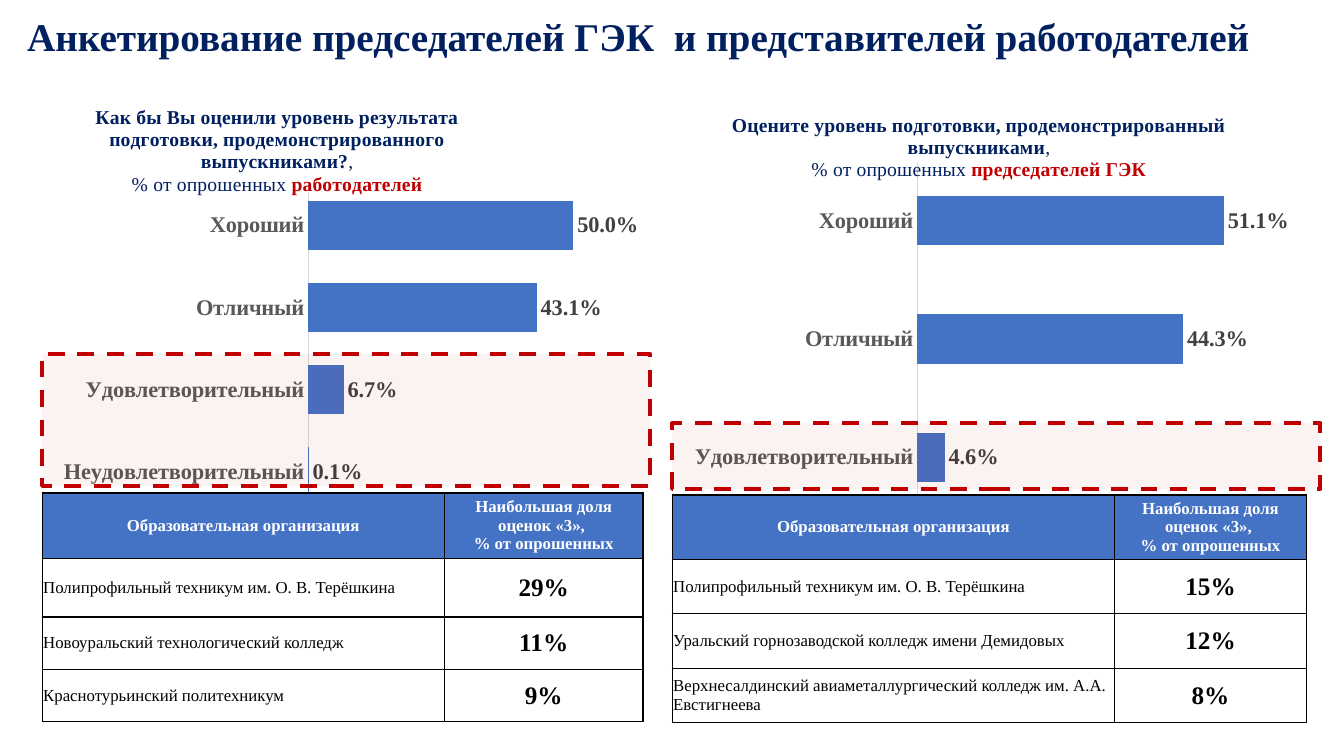
from lxml import etree
from pptx import Presentation
from pptx import util as u
from pptx.chart import data as cd
from pptx.dml import color as dc
from pptx.enum import chart as ch, dml, shapes, text
from pptx.oxml import ns

rgb = dc.RGBColor.from_string
NAVY, RED, BLUE = "002060", "C00000", "4472C4"


def style(font, size, color, bold):
    font.name = "Times New Roman"
    font.size = u.Pt(size)
    font.color.rgb = rgb(color)
    font.bold = bold


def set_layout(parent, index, **values):
    for old in parent.findall(ns.qn("c:layout")):
        parent.remove(old)
    layout = etree.Element(ns.qn("c:layout"))
    manual = etree.SubElement(layout, ns.qn("c:manualLayout"))
    for tag, value in values.items():
        etree.SubElement(manual, ns.qn("c:" + tag)).set("val", str(value))
    parent.insert(index, layout)


panels = [
    {
        "chart_box": (27.4, 63.4, 429.1, 313.9),
        "question": [
            [("Как бы Вы оценили уровень результата", NAVY, True)],
            [("подготовки, продемонстрированного", NAVY, True)],
            [("выпускниками?", NAVY, True), (",", NAVY, False)],
            [("% от опрошенных ", NAVY, False), ("работодателей", RED, True)],
        ],
        "question_at": (0.09, 0.03),
        "plot": (0.449, 0.218, 0.53, 0.747),
        "gap": 68,
        "grades": [("Неудовлетворительный", 0.001), ("Удовлетворительный", 0.067),
                   ("Отличный", 0.431), ("Хороший", 0.5)],
        "table_at": (30.2, 352.1),
        "columns": (287.3, 141.8),
        "rows": (46.8, 41.8, 37.4, 37.4),
        "colleges": [("Полипрофильный техникум им. О. В. Терёшкина", "29%"),
                     ("Новоуральский технологический колледж", "11%"),
                     ("Краснотурьинский политехникум", "9%")],
        "highlight": (30.2, 252.7, 434.2, 94.3),
    },
    {
        "chart_box": (464.4, 65.5, 468.7, 313.9),
        "question": [
            [("Оцените уровень подготовки, продемонстрированный", NAVY, True)],
            [("выпускниками", NAVY, True), (",", NAVY, False)],
            [("% от опрошенных ", NAVY, False), ("председателей ГЭК", RED, True)],
        ],
        "question_at": (0.12, 0.04),
        "plot": (0.407, 0.159, 0.549, 0.808),
        "gap": 139,
        "grades": [("Удовлетворительный", 0.046), ("Отличный", 0.443), ("Хороший", 0.511)],
        "table_at": (480.2, 353.5),
        "columns": (316.1, 136.8),
        "rows": (46.1, 38.9, 38.9, 38.9),
        "colleges": [("Полипрофильный техникум им. О. В. Терёшкина", "15%"),
                     ("Уральский горнозаводской колледж имени Демидовых", "12%"),
                     ("Верхнесалдинский авиаметаллургический колледж им. А.А. Евстигнеева", "8%")],
        "highlight": (480.2, 302.4, 463, 46.8),
    },
]

prs = Presentation()
prs.slide_width, prs.slide_height = u.Pt(960), u.Pt(540)
slide = prs.slides.add_slide(prs.slide_layouts[5])

heading = slide.shapes.title
heading.left, heading.top, heading.width, heading.height = map(u.Pt, (12.2, 5, 936, 46.1))
heading.text_frame.vertical_anchor = text.MSO_ANCHOR.MIDDLE
heading.text_frame.word_wrap = True
heading_line = heading.text_frame.paragraphs[0]
heading_line.alignment = text.PP_ALIGN.JUSTIFY
heading_line.line_spacing = 0.9
heading_run = heading_line.add_run()
heading_run.text = "Анкетирование председателей ГЭК  и представителей работодателей"
style(heading_run.font, 28, NAVY, True)

for panel in panels:
    grades = cd.CategoryChartData(number_format="0.0%")
    grades.categories = [grade for grade, share in panel["grades"]]
    grades.add_series("Series 1", [share for grade, share in panel["grades"]])
    chart = slide.shapes.add_chart(
        ch.XL_CHART_TYPE.BAR_CLUSTERED, *map(u.Pt, panel["chart_box"]), grades).chart
    chart.font.name = "Calibri"
    chart.font.size = u.Pt(10)
    chart.font.color.rgb = rgb("000000")
    chart.has_legend = False

    question = chart.chart_title.text_frame
    for number, pieces in enumerate(panel["question"]):
        line = question.add_paragraph() if number else question.paragraphs[0]
        line.alignment = text.PP_ALIGN.CENTER
        for words, color, bold in pieces:
            run = line.add_run()
            run.text = words
            style(run.font, 14, color, bold)
    x, y = panel["question_at"]
    set_layout(chart._chartSpace.chart.find(ns.qn("c:title")), 1,
               xMode="edge", yMode="edge", x=x, y=y)
    x, y, w, h = panel["plot"]
    set_layout(chart._chartSpace.chart.plotArea, 0, layoutTarget="inner",
               xMode="edge", yMode="edge", x=x, y=y, w=w, h=h)

    grade_axis, share_axis = chart.category_axis, chart.value_axis
    grade_axis.major_tick_mark = ch.XL_TICK_MARK.NONE
    grade_axis.format.line.color.rgb = rgb("D9D9D9")
    grade_axis.format.line.width = u.Pt(0.75)
    style(grade_axis.tick_labels.font, 16, "595959", True)
    share_axis.minimum_scale, share_axis.maximum_scale = 0, 0.6
    share_axis.has_major_gridlines = False
    share_axis.visible = False

    bars = chart.plots[0]
    bars.gap_width = panel["gap"]
    bars.vary_by_categories = False
    bars.series[0].format.fill.solid()
    bars.series[0].format.fill.fore_color.rgb = rgb(BLUE)
    bars.has_data_labels = True
    labels = bars.data_labels
    labels.show_value = True
    labels.number_format = "0.0%"
    labels.number_format_is_linked = False
    labels.position = ch.XL_LABEL_POSITION.OUTSIDE_END
    style(labels.font, 16, "404040", True)

    colleges = [("Образовательная организация", "Наибольшая доля оценок «3», \n% от опрошенных")]
    colleges += panel["colleges"]
    table = slide.shapes.add_table(
        len(colleges), 2, *map(u.Pt, panel["table_at"]),
        u.Pt(sum(panel["columns"])), u.Pt(sum(panel["rows"]))).table
    table.horz_banding = False
    for column, width in zip(table.columns, panel["columns"]):
        column.width = u.Pt(width)
    for row, height in zip(table.rows, panel["rows"]):
        row.height = u.Pt(height)
    for r, college in enumerate(colleges):
        for c, words in enumerate(college):
            cell = table.cell(r, c)
            cell.vertical_anchor = text.MSO_ANCHOR.MIDDLE
            cell.margin_left = cell.margin_right = u.Pt(0.7 if r else 7.2)
            cell.margin_top = cell.margin_bottom = u.Pt(0.7)
            if r:
                cell.fill.background()
            else:
                cell.fill.solid()
                cell.fill.fore_color.rgb = rgb(BLUE)
            for number, part in enumerate(words.split("\n")):
                frame = cell.text_frame
                line = frame.add_paragraph() if number else frame.paragraphs[0]
                line.alignment = text.PP_ALIGN.LEFT if r and not c else text.PP_ALIGN.CENTER
                run = line.add_run()
                run.text = part
                style(run.font, 18 if r and c else 12, "000000" if r else "FFFFFF", not r or c == 1)
            properties = cell._tc.get_or_add_tcPr()
            for side, tag in enumerate(("a:lnL", "a:lnR", "a:lnT", "a:lnB")):
                border = etree.Element(ns.qn(tag), w=str(u.Pt(1)))
                ink = etree.SubElement(border, ns.qn("a:solidFill"))
                etree.SubElement(ink, ns.qn("a:srgbClr"), val="000000")
                properties.insert(side, border)

for panel in panels:
    highlight = slide.shapes.add_shape(
        shapes.MSO_SHAPE.RECTANGLE, *map(u.Pt, panel["highlight"]))
    highlight.shadow.inherit = False
    highlight.fill.solid()
    highlight.fill.fore_color.rgb = rgb(RED)
    tint = highlight._element.spPr.find(ns.qn("a:solidFill"))[0]
    etree.SubElement(tint, ns.qn("a:alpha"), val="5000")
    highlight.line.color.rgb = rgb(RED)
    highlight.line.width = u.Pt(3)
    highlight.line.dash_style = dml.MSO_LINE.DASH

prs.save("out.pptx")
